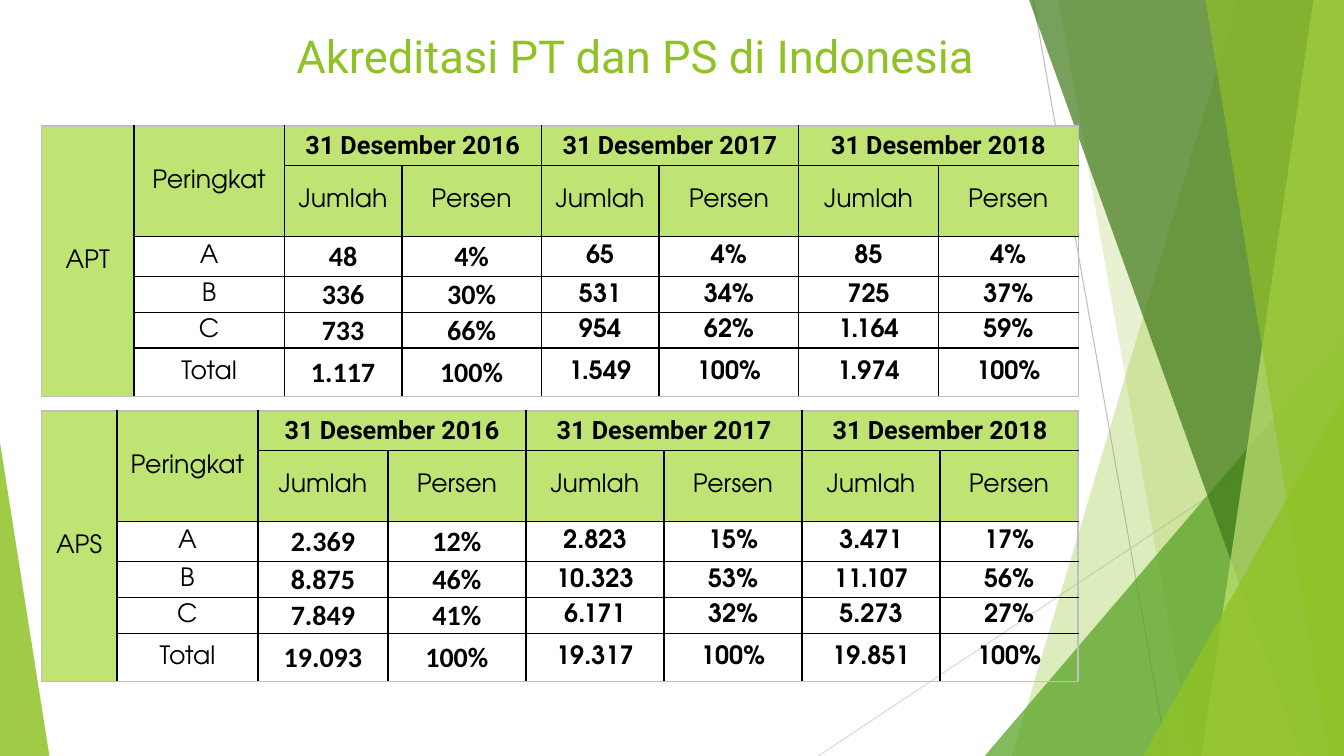
from lxml.etree import SubElement
from pptx import Presentation
from pptx.dml.color import RGBColor
from pptx.enum.shapes import MSO_CONNECTOR, MSO_SHAPE
from pptx.enum.text import MSO_ANCHOR, MSO_AUTO_SIZE, PP_ALIGN
from pptx.oxml.ns import qn
from pptx.util import Pt

HUES = {
    "lime": "90C226", "leaf": "54A021", "pine": "3F7819", "pale": "C0E474",
    "ink": "000000", "edge": "BFBFBF", "mist": "D9D9D9",
}
GOTHIC = "TeX Gyre Adventor"
WIDE, HIGH = 960, 540


def tint(fill, hue, alpha):
    fill.solid()
    fill.fore_color.rgb = RGBColor.from_string(HUES[hue])
    if alpha < 100:
        color = fill.fore_color._xFill[0]
        SubElement(color, qn("a:alpha"), val=str(alpha * 1000))


def write(frame, text, face, size, hue, bold, align):
    para = frame.paragraphs[0]
    para.alignment = align
    run = para.add_run()
    run.text = text
    run.font.name = face
    run.font.size = Pt(size)
    run.font.bold = bold
    run.font.color.rgb = RGBColor.from_string(HUES[hue])


deck = Presentation()
deck.slide_width, deck.slide_height = Pt(WIDE), Pt(HIGH)
slide = deck.slides.add_slide(deck.slide_layouts[5])
shapes = slide.shapes

for start, end, hue in [
    ((738, 0), (833.8, HIGH), "edge"),
    ((WIDE, 290.2), (584.6, HIGH), "mist"),
]:
    line = shapes.add_connector(
        MSO_CONNECTOR.STRAIGHT, *map(Pt, start + end))
    line.line.width = Pt(0.75)
    line.line.color.rgb = RGBColor.from_string(HUES[hue])
    SubElement(line.element.spPr, qn("a:effectLst"))

facets = [
    ("band", (884.2, 722.9), "lime", 30),
    ("band", (756, 851.8), "lime", 20),
    ("peak", (703.4, WIDE, 239.8, 1), "leaf", 72),
    ("band", (735.1, 929.5), "pine", 70),
    ("band", (938.2, 858.2), "pale", 70),
    ("band", (861.1, 949), "lime", 65),
    ("peak", (816.5, WIDE, 283, 1), "lime", 80),
    ("peak", (0, 35.3, 316.1, 0), "lime", 85),
]
for kind, spot, hue, alpha in facets:
    if kind == "band":
        head, foot = spot
        pen = shapes.build_freeform(Pt(head), 0)
        pen.add_line_segments([
            (Pt(WIDE), 0), (Pt(WIDE), Pt(HIGH)), (Pt(foot), Pt(HIGH))])
        facet = pen.convert_to_shape()
    else:
        left, right, top, tip = spot
        facet = shapes.add_shape(
            MSO_SHAPE.ISOSCELES_TRIANGLE,
            Pt(left), Pt(top), Pt(right - left), Pt(HIGH - top))
        facet.adjustments[0] = tip
    facet.shadow.inherit = False
    facet.line.fill.background()
    tint(facet.fill, hue, alpha)

title = shapes.title
title.left, title.top, title.width, title.height = map(
    Pt, (204.5, 14.4, 702, 49.7))
title.text_frame.auto_size = MSO_AUTO_SIZE.NONE
title.text_frame.vertical_anchor = MSO_ANCHOR.MIDDLE
write(title.text_frame, "Akreditasi PT dan PS di Indonesia",
      "Roboto", 32.4, "lime", False, PP_ALIGN.LEFT)
shapes.element.append(title.element)

heights = [28.2, 50.4, 28.8, 25.7, 25.4, 34.6]
dates = ["31 Desember 2016", "", "31 Desember 2017", "", "31 Desember 2018", ""]
heads = ["", ""] + ["Jumlah", "Persen"] * 3
grids = [
    ("APT", 90, [66.2, 107.3, 84.2, 99.4, 84.2, 99.8, 99.8, 99.8], [
        ["A", "48", "4%", "65", "4%", "85", "4%"],
        ["B", "336", "30%", "531", "34%", "725", "37%"],
        ["C", "733", "66%", "954", "62%", "1.164", "59%"],
        ["Total", "1.117", "100%", "1.549", "100%", "1.974", "100%"],
    ]),
    ("APS", 293.6, [54, 100.8, 92.8] + [98.6] * 5, [
        ["A", "2.369", "12%", "2.823", "15%", "3.471", "17%"],
        ["B", "8.875", "46%", "10.323", "53%", "11.107", "56%"],
        ["C", "7.849", "41%", "6.171", "32%", "5.273", "27%"],
        ["Total", "19.093", "100%", "19.317", "100%", "19.851", "100%"],
    ]),
]
for name, top, widths, ranks in grids:
    table = shapes.add_table(
        6, 8, Pt(29.5), Pt(top), Pt(sum(widths)), Pt(sum(heights))).table
    table.first_row = table.horz_banding = False
    for col, width in zip(table.columns, widths):
        col.width = Pt(width)
    for row, height in zip(table.rows, heights):
        row.height = Pt(height)

    table.cell(0, 0).merge(table.cell(5, 0))
    table.cell(0, 1).merge(table.cell(1, 1))
    for c in (2, 4, 6):
        table.cell(0, c).merge(table.cell(0, c + 1))

    rows = [[name, "Peringkat"] + dates, heads] + [[""] + rank for rank in ranks]
    for r, row in enumerate(rows):
        for c, text in enumerate(row):
            cell = table.cell(r, c)
            cell.vertical_anchor = MSO_ANCHOR.MIDDLE
            body = r > 1 and c > 0
            if body:
                side = 5 if c == 1 else 0.7
                cell.margin_left = cell.margin_right = Pt(side)
                cell.margin_top = Pt(0 if c == 1 else 0.7)
                cell.margin_bottom = 0

            outer = {
                "L": c == 0, "R": c + cell.span_width == 8,
                "T": r == 0, "B": r + cell.span_height == 6,
            }
            props = cell._tc.get_or_add_tcPr()
            for side, rim in outer.items():
                line = SubElement(props, qn("a:ln" + side), w=str(Pt(1)))
                fill = SubElement(line, qn("a:solidFill"))
                SubElement(fill, qn("a:srgbClr"),
                           val=HUES["edge" if rim else "ink"])
            if body:
                cell.fill.background()
            else:
                tint(cell.fill, "pale", 100)

            if text:
                date = r == 0 and c > 1
                large = body and c in (2, 3)
                face = "Roboto" if date else "Calibri" if large else GOTHIC
                write(cell.text_frame, text, face, 20 if large else 18, "ink",
                      date or (body and c > 1), PP_ALIGN.CENTER)

deck.save("out.pptx")
